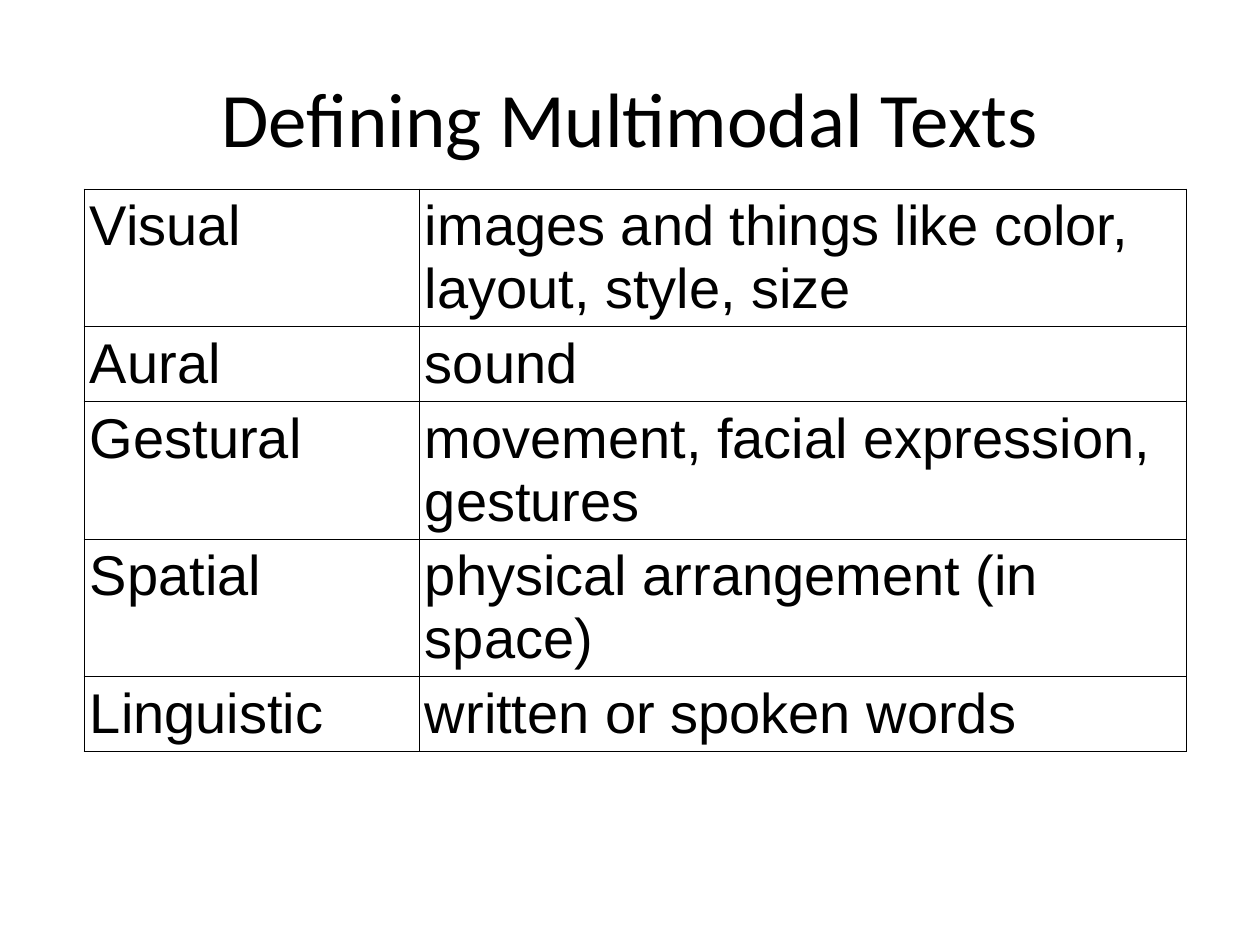
import pptx
import pptx.dml.color
import pptx.enum.text
import pptx.oxml
import pptx.oxml.ns
import pptx.util

EMU_PER_PX = 914400 / 126
BLACK = pptx.dml.color.RGBColor(0, 0, 0)

MODES = [
    ("Visual", "images and things like color, layout, style, size"),
    ("Aural", "sound"),
    ("Gestural", "movement, facial expression, gestures"),
    ("Spatial", "physical arrangement (in space)"),
    ("Linguistic", "written or spoken words"),
]
COLUMN_WIDTHS = (335, 767)
ONE_LINE, TWO_LINES = 75, 137
ROW_HEIGHTS = (TWO_LINES, ONE_LINE, TWO_LINES, TWO_LINES, ONE_LINE)


def px(length):
    return pptx.util.Emu(round(length * EMU_PER_PX))


def style_paragraph(paragraph, font_name, size):
    paragraph.font.name = font_name
    paragraph.font.size = pptx.util.Pt(size)
    paragraph.font.bold = False
    paragraph.font.color.rgb = BLACK


def add_title(slide, text):
    title = slide.shapes.title
    title.left, title.top, title.width, title.height = map(px, (63, 38, 1134, 158))
    title.text_frame.text = text
    title.text_frame.vertical_anchor = pptx.enum.text.MSO_ANCHOR.MIDDLE
    heading = title.text_frame.paragraphs[0]
    heading.alignment = pptx.enum.text.PP_ALIGN.CENTER
    style_paragraph(heading, "Calibri", 44)


def add_borders(cell):
    """Draw a half-point line on all four sides; call before setting the fill."""
    properties = cell._tc.get_or_add_tcPr()
    for side in ("lnL", "lnR", "lnT", "lnB"):
        properties.append(pptx.oxml.parse_xml(
            f'<a:{side} {pptx.oxml.ns.nsdecls("a")} w="{pptx.util.Pt(0.5)}">'
            f'<a:solidFill><a:srgbClr val="{BLACK}"/></a:solidFill></a:{side}>'
        ))


def fill_cell(cell, text):
    add_borders(cell)
    cell.fill.background()
    cell.margin_left = cell.margin_right = px(6)
    cell.margin_top = cell.margin_bottom = px(6)
    cell.text = text
    style_paragraph(cell.text_frame.paragraphs[0], "Arial", 32)


def add_modes_table(slide):
    modes = slide.shapes.add_table(
        len(MODES), len(COLUMN_WIDTHS), px(84), px(189),
        px(sum(COLUMN_WIDTHS)), px(sum(ROW_HEIGHTS)),
    ).table
    modes.first_row = False
    modes.horz_banding = False
    for column, width in zip(modes.columns, COLUMN_WIDTHS):
        column.width = px(width)
    for row, height, texts in zip(modes.rows, ROW_HEIGHTS, MODES):
        row.height = px(height)
        for cell, text in zip(row.cells, texts):
            fill_cell(cell, text)


def main():
    presentation = pptx.Presentation()
    presentation.slide_width = px(1260)
    presentation.slide_height = px(945)
    title_only = presentation.slide_layouts[5]
    slide = presentation.slides.add_slide(title_only)
    add_title(slide, "Defining Multimodal Texts")
    add_modes_table(slide)
    presentation.save("out.pptx")


if __name__ == "__main__":
    main()
